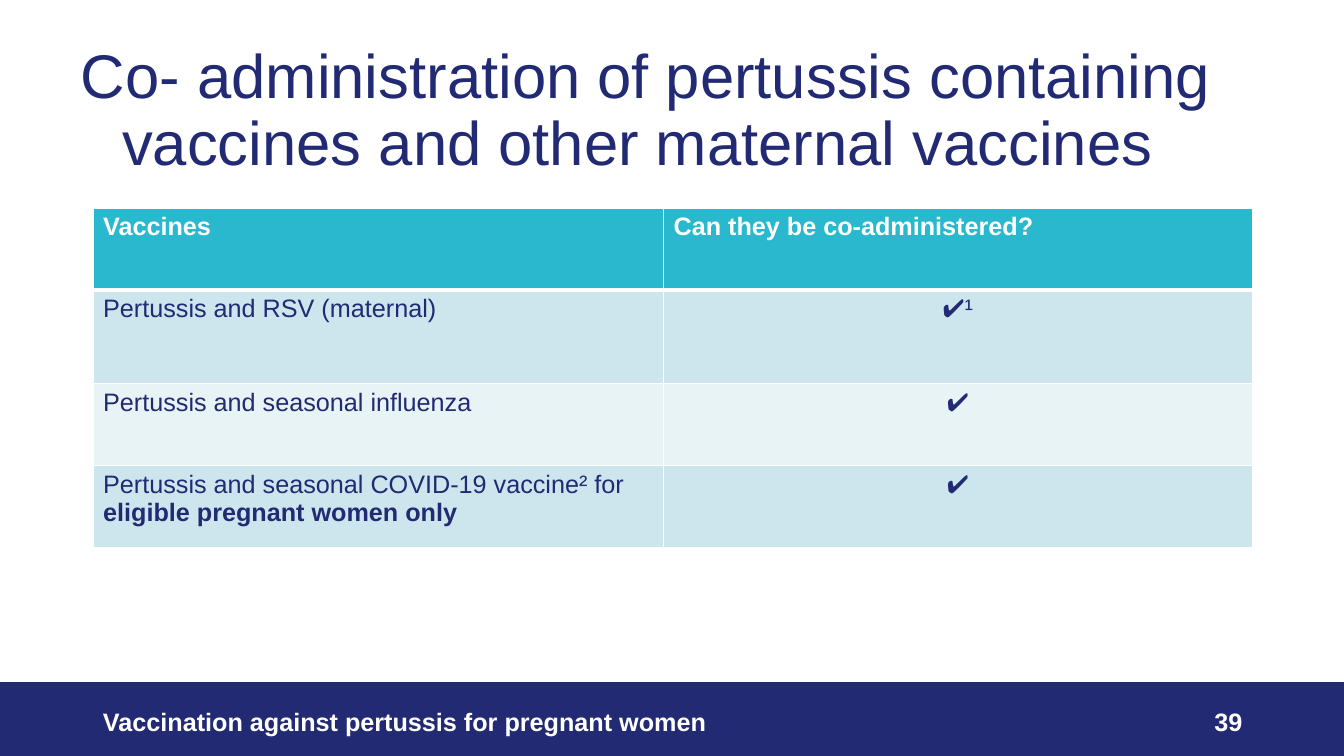
"""Build the slide on giving pertussis vaccines together with other maternal vaccines."""
from lxml import etree
from pptx import Presentation
from pptx.dml.color import RGBColor
from pptx.enum import shapes, text
from pptx.oxml import ns
from pptx.util import Pt

NAVY = RGBColor(0x21, 0x2A, 0x73)
TEAL = RGBColor(0x29, 0xB8, 0xCE)
PALE = RGBColor(0xCD, 0xE6, 0xED)
PALER = RGBColor(0xE8, 0xF3, 0xF6)
WHITE = RGBColor(0xFF, 0xFF, 0xFF)

LEFT, CENTER, RIGHT = text.PP_ALIGN.LEFT, text.PP_ALIGN.CENTER, text.PP_ALIGN.RIGHT
TOP, MIDDLE = text.MSO_ANCHOR.TOP, text.MSO_ANCHOR.MIDDLE

COLUMN_WIDTHS = (407.5, 420.5)
ROW_HEIGHTS = (58.5, 67, 58.5, 58.5)
HEADINGS = ("Vaccines", "Can they be co-administered?")
VACCINES = (
    ("Pertussis and RSV (maternal)", "", "✔¹"),
    ("Pertussis and seasonal influenza", "", "✔"),
    ("Pertussis and seasonal COVID-19 vaccine² for ", "eligible pregnant women only", "✔"),
)


def add_text(para, words, size=18, color=NAVY, bold=False, align=LEFT):
    """Append one formatted span to a paragraph."""
    para.alignment = align
    span = para.add_run()
    span.text = words
    span.font.name = "Arial"
    span.font.size = Pt(size)
    span.font.bold = bold
    span.font.color.rgb = color


def add_box(page, left, top, width, height, words, anchor=MIDDLE, spacing=1.0, **style):
    """Add a wrapped text box holding one paragraph."""
    box = page.shapes.add_textbox(Pt(left), Pt(top), Pt(width), Pt(height))
    frame = box.text_frame
    frame.word_wrap = True
    frame.vertical_anchor = anchor
    para = frame.paragraphs[0]
    para.line_spacing = spacing
    add_text(para, words, **style)


def add_band(page, left, top, width, height):
    """Add the navy footer band."""
    band = page.shapes.add_shape(
        shapes.MSO_SHAPE.RECTANGLE, Pt(left), Pt(top), Pt(width), Pt(height))
    band.shadow.inherit = False
    band.fill.solid()
    band.fill.fore_color.rgb = NAVY
    band.line.color.rgb = NAVY
    band.line.width = Pt(1)


def paint_cell(cell, color, top=1, bottom=1):
    """Fill a cell and draw its white borders."""
    cell.fill.solid()
    cell.fill.fore_color.rgb = color
    properties = cell._tc.get_or_add_tcPr()
    for place, (side, width) in enumerate(
            (("L", 1), ("R", 1), ("T", top), ("B", bottom))):
        border = etree.Element(ns.qn(f"a:ln{side}"), w=str(Pt(width)))
        fill = etree.SubElement(border, ns.qn("a:solidFill"))
        etree.SubElement(fill, ns.qn("a:srgbClr"), val=str(WHITE))
        properties.insert(place, border)


def add_vaccine_table(page, left, top):
    """Add the table of vaccine pairs."""
    table = page.shapes.add_table(
        len(ROW_HEIGHTS), len(COLUMN_WIDTHS), Pt(left), Pt(top),
        Pt(sum(COLUMN_WIDTHS)), Pt(sum(ROW_HEIGHTS))).table
    for column, width in zip(table.columns, COLUMN_WIDTHS):
        column.width = Pt(width)
    for row, height in zip(table.rows, ROW_HEIGHTS):
        row.height = Pt(height)

    for column, heading in enumerate(HEADINGS):
        cell = table.cell(0, column)
        paint_cell(cell, TEAL, bottom=3)
        add_text(cell.text_frame.paragraphs[0], heading, color=WHITE, bold=True)

    for row, (pair, emphasis, answer) in enumerate(VACCINES, start=1):
        pair_cell, answer_cell = table.cell(row, 0), table.cell(row, 1)
        for cell in (pair_cell, answer_cell):
            paint_cell(cell, PALE if row % 2 else PALER, top=3 if row == 1 else 1)
        para = pair_cell.text_frame.paragraphs[0]
        add_text(para, pair)
        if emphasis:
            add_text(para, emphasis, bold=True)
        add_text(answer_cell.text_frame.paragraphs[0], answer, align=CENTER)


def main():
    """Build and save the deck."""
    deck = Presentation()
    deck.slide_width, deck.slide_height = Pt(960), Pt(540)
    page = deck.slides.add_slide(deck.slide_layouts[6])
    add_band(page, 0, 487.5, 960, 52.5)
    add_box(page, 29, 29, 865.5, 82,
            "Co- administration of pertussis containing vaccines and other maternal vaccines ",
            anchor=TOP, spacing=0.9, size=44, align=CENTER)
    add_vaccine_table(page, 66.5, 148.5)
    footer = dict(color=WHITE, bold=True)
    add_box(page, 66.5, 500.5, 576, 29,
            "Vaccination against pertussis for pregnant women", **footer)
    add_box(page, 678.5, 500.5, 216, 29, "39", align=RIGHT, **footer)
    deck.save("out.pptx")


if __name__ == "__main__":
    main()
